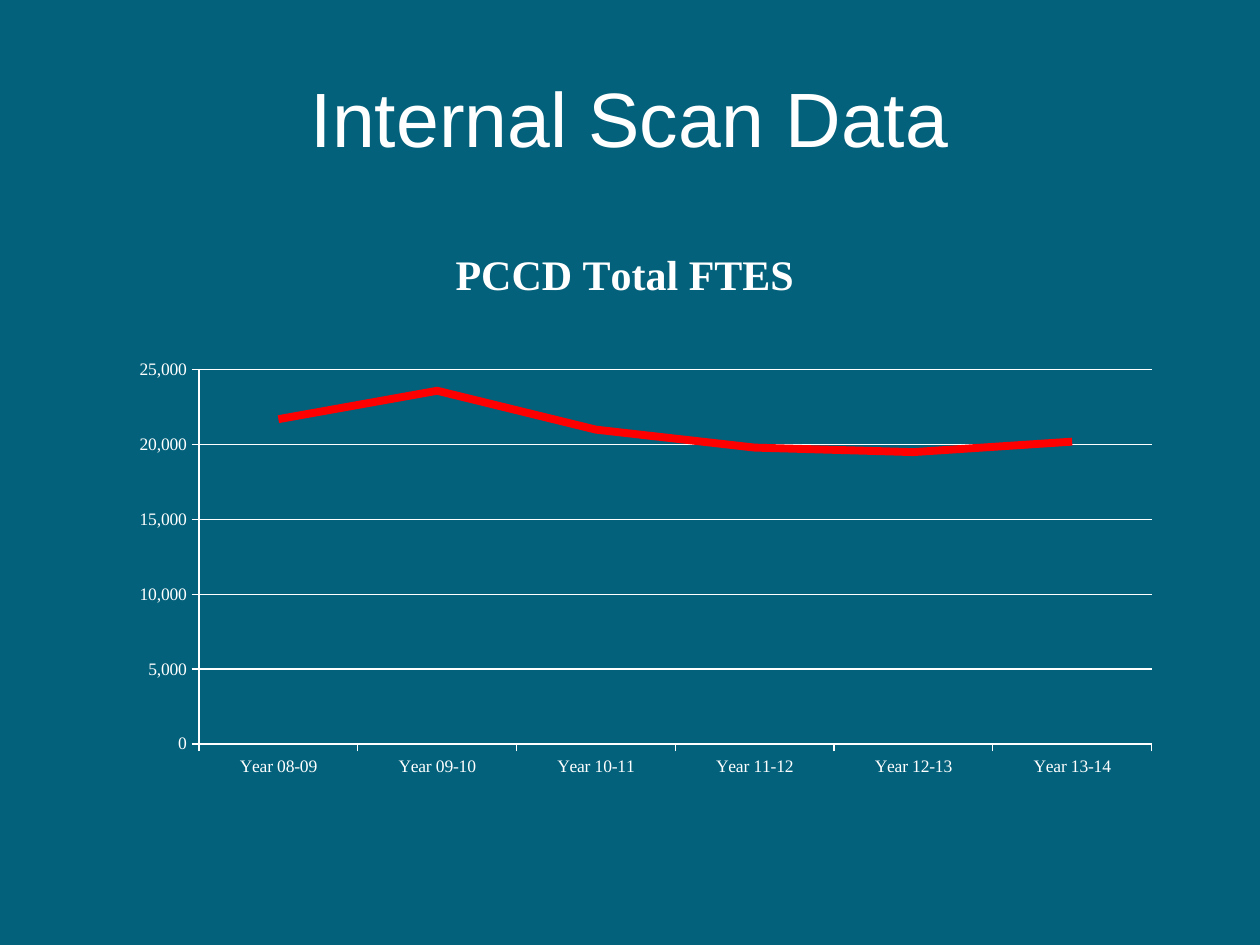
from lxml.etree import SubElement
from pptx import Presentation
from pptx.chart.data import CategoryChartData
from pptx.dml.color import RGBColor
from pptx.enum.chart import XL_CHART_TYPE, XL_MARKER_STYLE, XL_TICK_MARK
from pptx.enum.text import MSO_ANCHOR, PP_ALIGN
from pptx.oxml.ns import qn
from pptx.util import Inches, Pt

TEAL = RGBColor(0x04, 0x61, 0x7B)
WHITE = RGBColor(0xFF, 0xFF, 0xFF)
RED = RGBColor(0xFF, 0x00, 0x00)


def write(frame, text, size=10, face="Arial", color=WHITE, bold=False):
    para = frame.paragraphs[0]
    para.alignment = PP_ALIGN.CENTER
    run = para.add_run()
    run.text = text
    font = run.font
    font.size, font.name, font.bold = Pt(size), face, bold
    font.color.rgb = color


class Deck:
    serif = "Times New Roman"

    def __init__(self, width, height):
        self.file = Presentation()
        self.file.slide_width = Inches(width)
        self.file.slide_height = Inches(height)
        self.slide = self.file.slides.add_slide(self.file.slide_layouts[6])
        fill = self.slide.background.fill
        fill.solid()
        fill.fore_color.rgb = TEAL

    def place(self, left, top, width, height):
        wide, high = self.file.slide_width, self.file.slide_height
        return int(left * wide), int(top * high), int(width * wide), int(height * high)

    def title(self, text, *box):
        frame = self.slide.shapes.add_textbox(*self.place(*box)).text_frame
        frame.word_wrap = True
        frame.vertical_anchor = MSO_ANCHOR.MIDDLE
        write(frame, text, size=44)

    def line(self, line, color, width):
        line.color.rgb = color
        line.width = Pt(width)

    def layout(self, chart, **area):
        plot = chart._chartSpace.chart.plotArea
        for old in plot.findall(qn("c:layout")):
            plot.remove(old)
        layout = SubElement(plot, qn("c:layout"))
        plot.insert(0, layout)
        manual = SubElement(layout, qn("c:manualLayout"))
        marks = dict(layoutTarget="inner", xMode="edge", yMode="edge", **area)
        for key, value in marks.items():
            SubElement(manual, qn(f"c:{key}")).set("val", str(value))

    def chart(self, head, cats, name, values, *box):
        data = CategoryChartData(number_format="#,##0")
        data.categories = cats
        data.add_series(name, values)
        chart = self.slide.shapes.add_chart(
            XL_CHART_TYPE.LINE, *self.place(*box), data).chart
        chart.has_legend = False
        chart.font.size, chart.font.name = Pt(10), self.serif
        chart.font.color.rgb = WHITE
        chart.has_title = True
        write(chart.chart_title.text_frame, head, size=24, face=self.serif, bold=True)
        chart.chart_title.include_in_layout = False
        for axis in (chart.category_axis, chart.value_axis):
            axis.major_tick_mark = XL_TICK_MARK.OUTSIDE
            axis.minor_tick_mark = XL_TICK_MARK.NONE
            self.line(axis.format.line, WHITE, 0.75)
        scale = chart.value_axis
        scale.minimum_scale, scale.maximum_scale, scale.major_unit = 0, 25000, 5000
        scale.tick_labels.number_format = "#,##0"
        scale.tick_labels.number_format_is_linked = False
        scale.has_major_gridlines = True
        self.line(scale.major_gridlines.format.line, WHITE, 0.75)
        plot = chart.plots[0]
        plot.vary_by_categories = False
        trend = plot.series[0]
        trend.smooth = False
        trend.marker.style = XL_MARKER_STYLE.NONE
        self.line(trend.format.line, RED, 4.5)
        self.layout(chart, x=0.12, y=0.24, w=0.84, h=0.6)


def main():
    deck = Deck(10, 7.5)
    deck.title("Internal Scan Data", 0.05, 0.04, 0.9, 1 / 6)
    years = [f"Year {year:02}-{year + 1:02}" for year in range(8, 14)]
    totals = [21700, 23600, 21000, 19800, 19500, 20200]
    deck.chart("PCCD Total FTES ", years, "Series 1", totals, 0.05, 0.233, 0.9, 0.66)
    deck.file.save("out.pptx")


if __name__ == "__main__":
    main()
